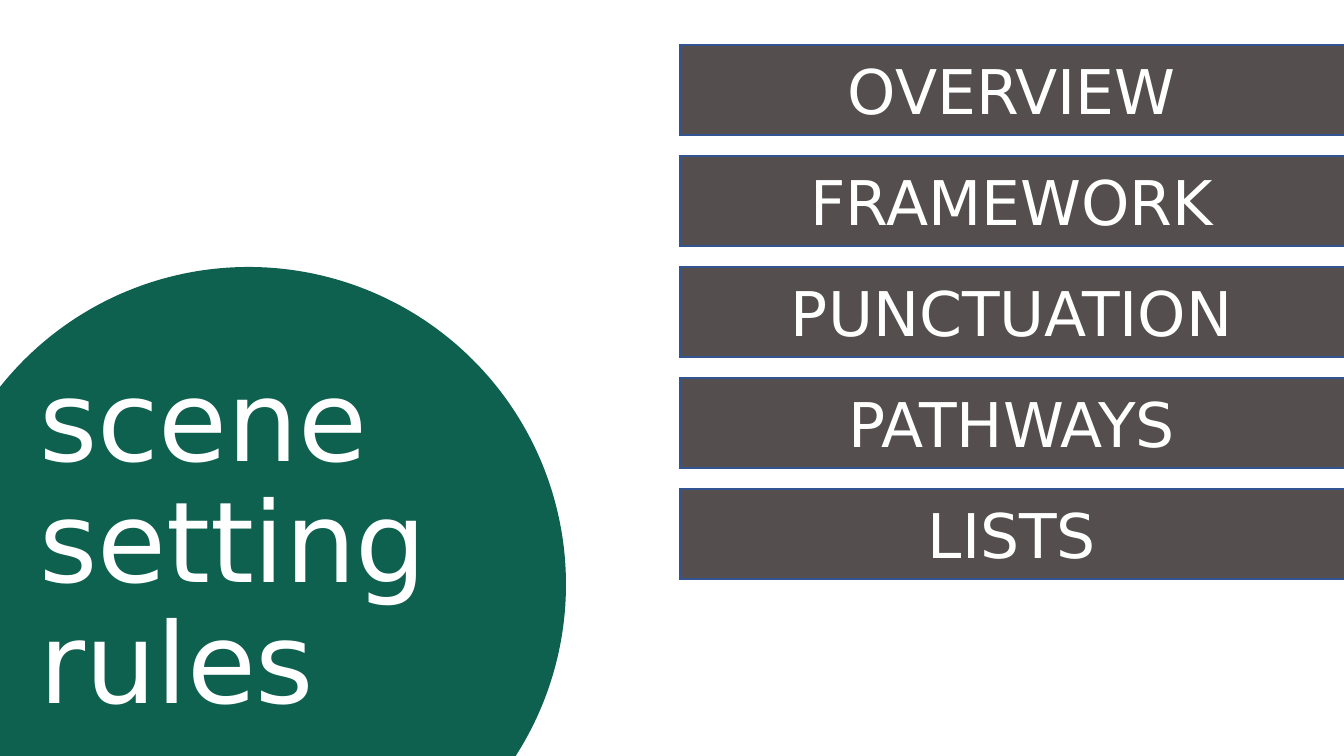
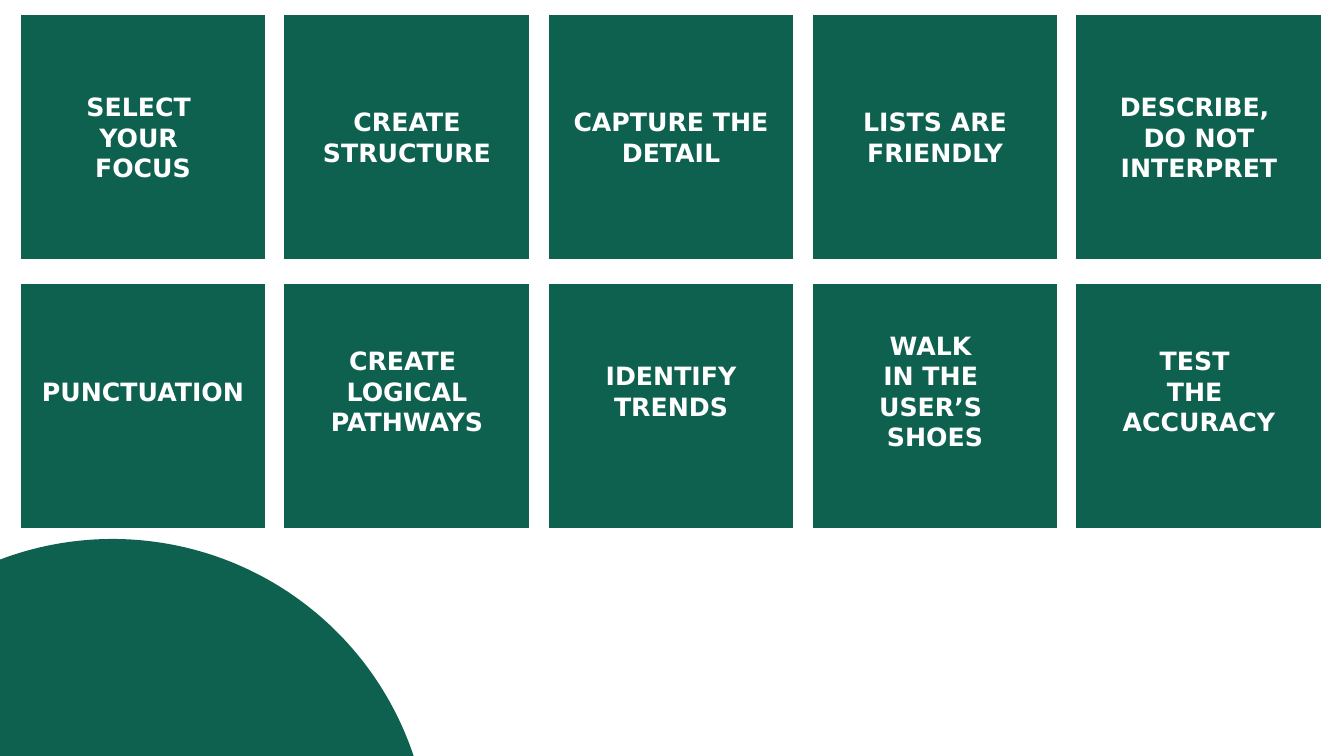
from lxml.etree import SubElement
from pptx import Presentation
from pptx.dml.color import RGBColor as Rgb
from pptx.enum.shapes import MSO_SHAPE as Shape
from pptx.enum.text import MSO_ANCHOR as Anchor, MSO_AUTO_SIZE as Fit, PP_ALIGN as Align
from pptx.oxml.ns import qn
from pptx.util import Inches, Pt

PX = Inches(7.5) / 756
GREEN = Rgb(0x0F, 0x61, 0x4F)
GRAY = Rgb(0x55, 0x4E, 0x4E)
BLUE = Rgb(0x32, 0x54, 0x91)
WHITE = Rgb(0xFF, 0xFF, 0xFF)
FONT = "DejaVu Sans"
TOPICS = ["OVERVIEW", "FRAMEWORK", "PUNCTUATION", "PATHWAYS", "LISTS"]
RULES = [
    ["SELECT \nYOUR \nFOCUS", "CREATE STRUCTURE", "CAPTURE THE DETAIL",
     "LISTS ARE FRIENDLY", "DESCRIBE, \nDO NOT INTERPRET"],
    ["PUNCTUATION", "CREATE \nLOGICAL PATHWAYS", "IDENTIFY TRENDS",
     "WALK \nIN THE \nUSER’S \nSHOES", "TEST \nTHE \nACCURACY"],
]


def px(num):
    """Turn pixels into EMU."""
    return round(num * PX)


def write(shape, text, size, bold=False, align=Align.CENTER, space=None, foot=5):
    """Fill a shape with formatted text, one paragraph a line."""
    frame = shape.text_frame
    frame.text = text
    frame.word_wrap = True
    frame.auto_size = Fit.NONE
    frame.vertical_anchor = Anchor.MIDDLE
    frame.margin_bottom = px(foot)
    for para in frame.paragraphs:
        para.alignment = align
        para.line_spacing = space
        for run in para.runs:
            font = run.font
            font.name, font.size, font.bold = FONT, Pt(size), bold
            font.color.rgb = WHITE


def draw(slide, kind, box, fill, line=None, width=1):
    """Add a flat shape in the given box."""
    shape = slide.shapes.add_shape(kind, *map(px, box))
    shape.shadow.inherit = False
    shape.fill.solid()
    shape.fill.fore_color.rgb = fill
    if line is None:
        shape.line.fill.background()
    else:
        shape.line.color.rgb = line
        shape.line.width = Pt(width)
        SubElement(shape.element.spPr.get_or_add_ln(), qn("a:miter"), lim="800000")
    return shape


def disc(slide, left, top):
    """Add the large green circle that both slides share."""
    return draw(slide, Shape.OVAL, (left, top, 635, 635), GREEN)


def head(slide, text, box):
    """Place the title in front of the circle."""
    title = slide.shapes.title
    title.left, title.top, title.width, title.height = map(px, box)
    write(title, text, 80, align=Align.LEFT, space=0.9)
    title.element.addprevious(disc(slide, -69, 267).element)


def bars(slide, box, step):
    """Stack the topic bars downward from the first box."""
    left, top, wide, high = box
    for row, text in enumerate(TOPICS):
        spot = (left, top + row * step, wide, high)
        write(draw(slide, Shape.RECTANGLE, spot, GRAY, BLUE), text, 44)


def tiles(slide, box, across, down):
    """Lay out the rule tiles in a grid from the first box."""
    left, top, wide, high = box
    for row, line in enumerate(RULES):
        for col, text in enumerate(line):
            spot = (left + col * across, top + row * down, wide, high)
            tile = draw(slide, Shape.RECTANGLE, spot, GREEN, GREEN, 5)
            write(tile, text, 18, bold=True, foot=5 + 30 * row)


def main():
    """Build and save both slides."""
    deck = Presentation()
    deck.slide_width, deck.slide_height = px(1344), px(756)
    scene = deck.slides.add_slide(deck.slide_layouts[5])
    head(scene, "scene setting rules", (29, 467, 567, 158))
    bars(scene, (680, 45, 664, 90), 111)
    grid = deck.slides.add_slide(deck.slide_layouts[6])
    tiles(grid, (24, 18, 238, 238), 264, 269)
    disc(grid, -205, 539)
    deck.save("out.pptx")


if __name__ == "__main__":
    main()
